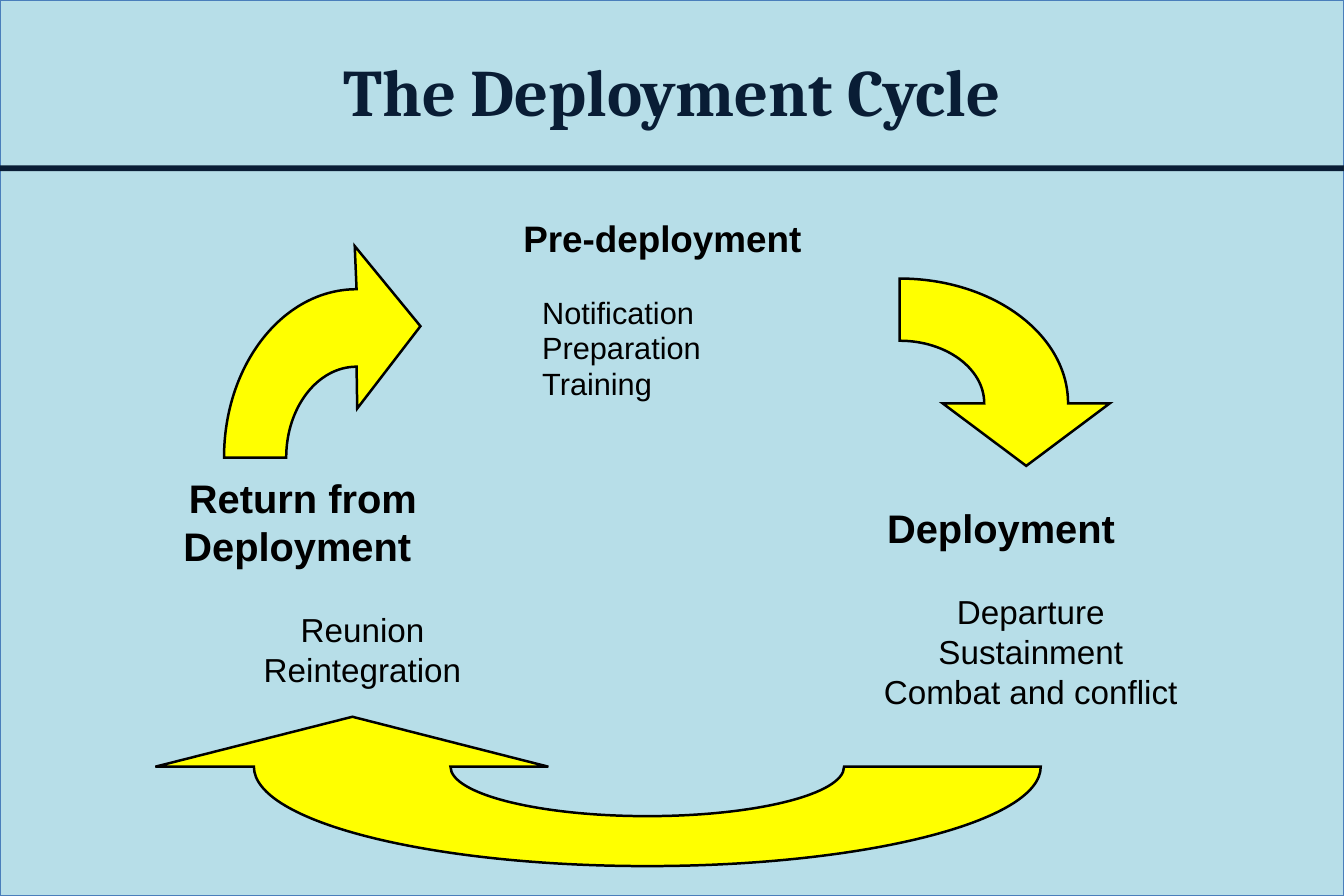
"""Build the deployment cycle slide: three stages joined by curved arrows."""
from math import cos, radians, sin

from lxml.etree import SubElement
from pptx import Presentation
from pptx.dml.color import RGBColor
from pptx.enum.shapes import MSO_SHAPE
from pptx.enum.text import MSO_ANCHOR, PP_ALIGN
from pptx.oxml.ns import qn
from pptx.util import Pt

WIDTH, HEIGHT = 810, 540
QUARTER_HANDLE = 0.5523
TITLE = "The Deployment Cycle"

STAGES = [
    dict(box=(283.7, 131.4, 231.1, 124.6), heading="Pre-deployment", heading_size=22.2,
         items=["Notification", "Preparation", "Training"], item_size=18.5,
         align=PP_ALIGN.LEFT, indent=36, spacing=0.8, gap=24.8, before=3.9),
    dict(box=(465.8, 300.2, 275, 131.8), heading="Deployment", heading_size=24,
         items=["Departure", "Sustainment", "Combat and conflict"], item_size=20,
         align=PP_ALIGN.CENTER, indent=36, spacing=1.0, gap=24.1, before=0),
    dict(box=(67.7, 282.2, 229.7, 136.8), heading="Return from Deployment ", heading_size=24,
         items=["Reunion", "Reintegration"], item_size=20,
         align=PP_ALIGN.CENTER, indent=72, spacing=1.0, gap=24.1, before=0),
]

ARROWS = [
    dict(center=(542.2, 243.1), outer=(101.5, 75.2), inner=(51, 37.7), sweep=(-90, 0),
         head=[(668.9, 243.1), (618.5, 280.8), (568.1, 243.1)]),
    dict(center=(214.9, 275.8), outer=(79.9, 101.5), inner=(42.4, 54.8), sweep=(180, 270),
         head=[(213.8, 148.3), (253.4, 196.6), (215.3, 246.2)]),
    dict(center=(390.1, 462.1), outer=(237.1, 59.9), inner=(118.6, 29.8), sweep=(0, 180),
         head=[(93.6, 462.1), (212.4, 432), (330.5, 462.1)]),
]

THEME = dict(
    background=RGBColor(0xB7, 0xDE, 0xE8), border=RGBColor(0x4A, 0x7E, 0xBB),
    navy=RGBColor(0x09, 0x1D, 0x35), black=RGBColor(0, 0, 0),
    arrow=RGBColor(0xFF, 0xFF, 0), title_font="Cambria", body_font="Arial", title_size=40,
)


def style(sp, fill, line=None, weight=0):
    sp.shadow.inherit = False
    sp.fill.solid()
    sp.fill.fore_color.rgb = fill
    if line is None:
        sp.line.fill.background()
    else:
        sp.line.color.rgb = line
        sp.line.width = Pt(weight)
        SubElement(sp._element.spPr.find(qn("a:ln")), qn("a:miter"), lim="800000")


def add_rect(s, box, fill, **line):
    sp = s.shapes.add_shape(MSO_SHAPE.RECTANGLE, *map(Pt, box))
    style(sp, fill, **line)


def add_box(s, box, anchor=MSO_ANCHOR.TOP):
    tf = s.shapes.add_textbox(*map(Pt, box)).text_frame
    tf.word_wrap = True
    tf.vertical_anchor = anchor
    return tf


def write(p, text, size, color=THEME["black"], font=THEME["body_font"], bold=False,
          align=PP_ALIGN.CENTER, spacing=1.0, before=0, indent=0):
    p.alignment = align
    p.line_spacing = spacing
    p.space_before = Pt(before)
    if indent:
        p._p.get_or_add_pPr().set("marL", str(Pt(indent)))
    r = p.add_run()
    r.text = text
    r.font.name, r.font.size, r.font.bold = font, Pt(size), bold
    r.font.color.rgb = color


def add_stage(s, stage):
    tf = add_box(s, stage["box"])
    write(tf.paragraphs[0], stage["heading"], stage["heading_size"], bold=True,
          spacing=stage["spacing"])
    for i, item in enumerate(stage["items"]):
        write(tf.add_paragraph(), item, stage["item_size"], align=stage["align"],
              spacing=stage["spacing"], indent=stage["indent"],
              before=stage["before"] if i else stage["gap"])


def arc(center, radii, start, end):
    """Return the start point, then three Bezier points for each quarter turn."""
    def at(angle, pull=0):
        c, d = cos(radians(angle)), sin(radians(angle))
        return center[0] + radii[0] * (c - pull * d), center[1] + radii[1] * (d + pull * c)

    turn = 90 if end > start else -90
    handle = QUARTER_HANDLE * turn / 90
    points = [at(start)]
    for angle in range(start, end, turn):
        points += [at(angle, handle), at(angle + turn, -handle), at(angle + turn)]
    return points


def bend(lines):
    """Turn three line segments into one cubic curve."""
    parent = lines[0].getparent()
    curve = parent.makeelement(qn("a:cubicBezTo"))
    lines[0].addprevious(curve)
    for line in lines:
        curve.append(line[0])
        parent.remove(line)


def set_frame(sp, center, radii):
    """Make the frame span the whole outer ellipse, leaving the outline in place."""
    left, top = (Pt(c - r) for c, r in zip(center, radii))
    width, height = (Pt(2 * r) for r in radii)
    outline = next(sp._element.iter(qn("a:path")))
    for pt in outline.iter(qn("a:pt")):
        pt.set("x", str(int(pt.get("x")) + sp.left - left))
        pt.set("y", str(int(pt.get("y")) + sp.top - top))
    outline.set("w", str(width))
    outline.set("h", str(height))
    sp.left, sp.top, sp.width, sp.height = left, top, width, height


def add_arrow(s, center, outer, inner, sweep, head):
    start, end = sweep
    outside, inside = arc(center, outer, start, end), arc(center, inner, end, start)
    points = [(Pt(x), Pt(y)) for x, y in outside + head + inside]
    fb = s.shapes.build_freeform(*points[0])
    fb.add_line_segments(points[1:], close=True)
    sp = fb.convert_to_shape()
    lines = list(sp._element.iter(qn("a:lnTo")))
    curved = len(outside) - 1
    second = curved + len(head) + 1
    for first in (0, second):
        for i in range(first, first + curved, 3):
            bend(lines[i:i + 3])
    set_frame(sp, center, outer)
    style(sp, THEME["arrow"], line=THEME["black"], weight=1.5)


def main():
    prs = Presentation()
    prs.slide_width, prs.slide_height = Pt(WIDTH), Pt(HEIGHT)
    s = prs.slides.add_slide(prs.slide_layouts[6])
    add_rect(s, (0, 0, WIDTH, HEIGHT), THEME["background"], line=THEME["border"], weight=0.75)
    add_rect(s, (0, 99.6, WIDTH, 3.6), THEME["navy"])
    tf = add_box(s, (0, 12.2, WIDTH, 84.2), anchor=MSO_ANCHOR.MIDDLE)
    write(tf.paragraphs[0], TITLE, THEME["title_size"], color=THEME["navy"],
          font=THEME["title_font"], bold=True)
    for stage in STAGES:
        add_stage(s, stage)
    for arrow in ARROWS:
        add_arrow(s, **arrow)
    prs.save("out.pptx")


if __name__ == "__main__":
    main()
